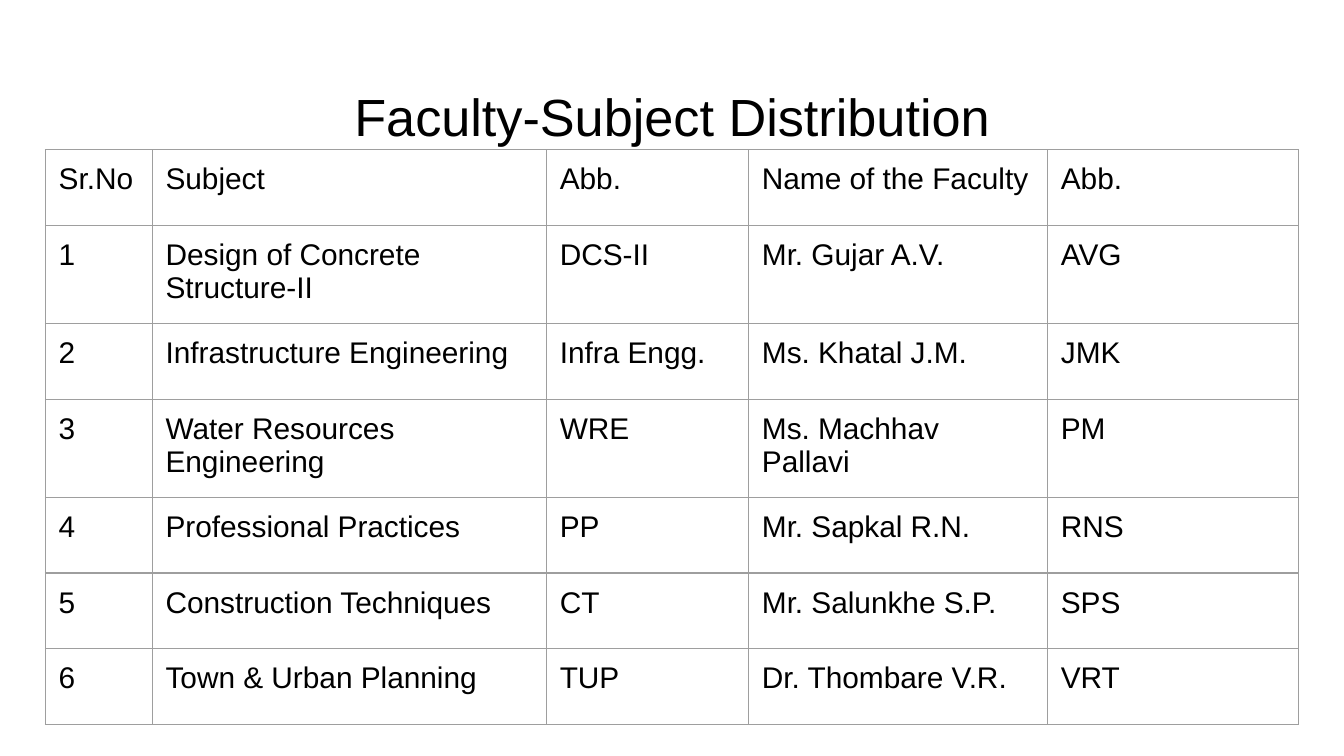
from lxml import etree
from pptx import Presentation
from pptx.dml.color import RGBColor
from pptx.enum import text
from pptx.oxml import ns
from pptx.util import Cm, Pt

# Content
TITLE = "Faculty-Subject Distribution"
ROWS = [
    ("Sr.No", "Subject", "Abb.", "Name of the Faculty", "Abb."),
    ("1", "Design of Concrete Structure-II", "DCS-II", "Mr. Gujar A.V.", "AVG"),
    ("2", "Infrastructure Engineering", "Infra Engg.", "Ms. Khatal J.M.", "JMK"),
    ("3", "Water Resources Engineering", "WRE", "Ms. Machhav Pallavi", "PM"),
    ("4", "Professional Practices", "PP", "Mr. Sapkal R.N.", "RNS"),
    ("5", "Construction Techniques", "CT", "Mr. Salunkhe S.P.", "SPS"),
    ("6", "Town & Urban Planning", "TUP", "Dr. Thombare V.R.", "VRT"),
]

# Look and layout
COLORS = {"text": "000000", "grid": "9E9E9E"}
FONT = "Arial"
LEFT = Cm(0.86)
COL_WIDTHS = [Cm(w) for w in (2.02, 7.45, 3.82, 5.65, 4.74)]
WIDTH = sum(COL_WIDTHS)
ROW_HEIGHT = Cm(1.43)
INSET = Cm(0.25)


def style(p, size):
    p.font.name = FONT
    p.font.size = Pt(size)
    p.font.color.rgb = RGBColor.from_string(COLORS["text"])


def add_borders(cell):
    tc_pr = cell._tc.get_or_add_tcPr()
    for side in ("lnL", "lnR", "lnT", "lnB"):
        ln = etree.SubElement(tc_pr, ns.qn(f"a:{side}"), w=str(Pt(0.75)))
        fill = etree.SubElement(ln, ns.qn("a:solidFill"))
        etree.SubElement(fill, ns.qn("a:srgbClr"), val=COLORS["grid"])


prs = Presentation()
prs.slide_width, prs.slide_height = Cm(25.4), Cm(14.29)
s = prs.slides.add_slide(prs.slide_layouts[6])

# Title
tf = s.shapes.add_textbox(LEFT, Cm(1.25), WIDTH, Cm(1.6)).text_frame
tf.word_wrap = True
tf.vertical_anchor = text.MSO_ANCHOR.TOP
tf.margin_left = tf.margin_right = tf.margin_bottom = INSET
tf.margin_top = Cm(0.34)
p = tf.paragraphs[0]
p.text = TITLE
p.alignment = text.PP_ALIGN.CENTER
style(p, 28)

# Table: rows with two lines of text grow by themselves
table = s.shapes.add_table(len(ROWS), len(COL_WIDTHS), LEFT, Cm(2.83),
                           WIDTH, ROW_HEIGHT * len(ROWS)).table
table.first_row = table.horz_banding = False
for column, width in zip(table.columns, COL_WIDTHS):
    column.width = width
for row, values in zip(table.rows, ROWS):
    row.height = ROW_HEIGHT
    for cell, value in zip(row.cells, values):
        cell.text = value
        style(cell.text_frame.paragraphs[0], 16)
        cell.margin_left = cell.margin_right = INSET
        cell.margin_top = cell.margin_bottom = INSET
        add_borders(cell)
        cell.fill.background()

prs.save("out.pptx")
